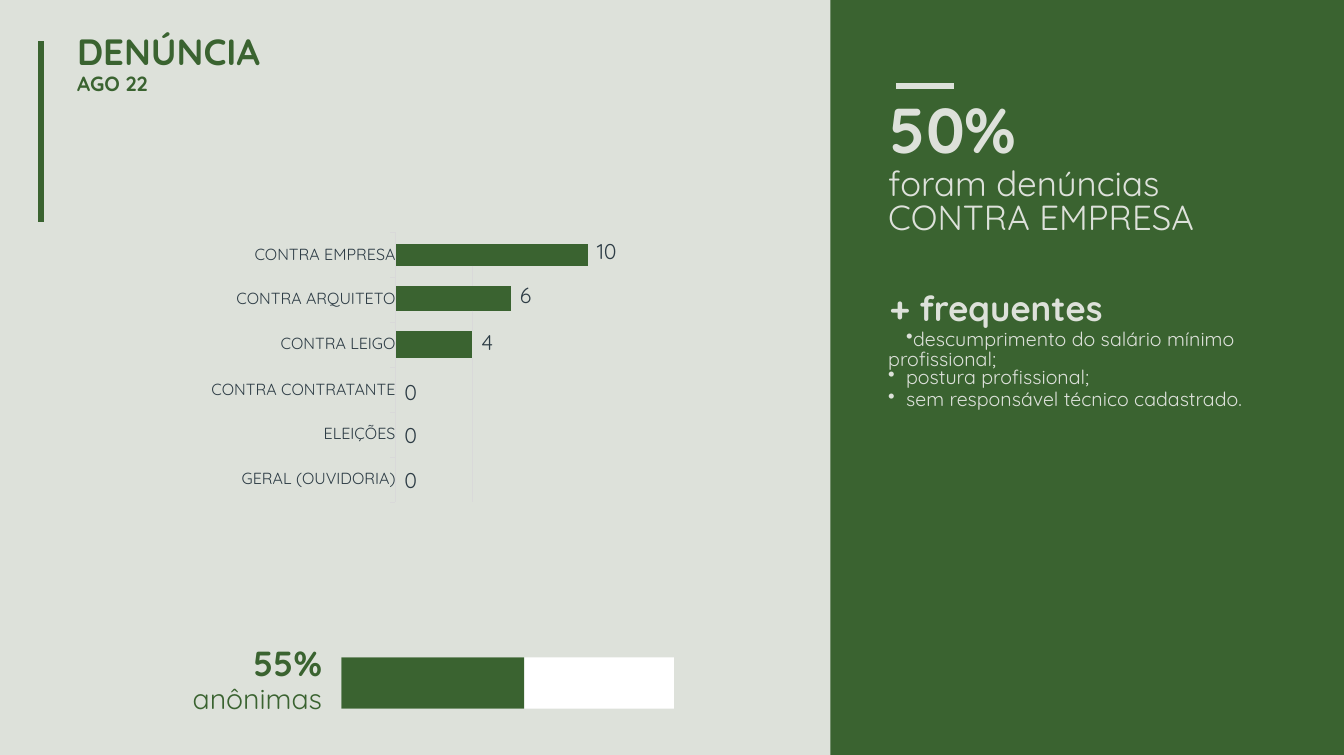
from lxml.etree import SubElement as Sub
from pptx import Presentation
from pptx.dml.color import RGBColor
from pptx.enum.shapes import MSO_CONNECTOR as Link, MSO_SHAPE as Shape
from pptx.enum.text import MSO_ANCHOR as Anchor, MSO_AUTO_SIZE as Auto, PP_ALIGN as Align
from pptx.oxml.ns import qn
from pptx.util import Inches, Pt

GREEN, PALE, WHITE, GRID, INK = "3A6330", "DDE1DA", "FFFFFF", "D9D9D9", "2E3D46"
FONT = "Quicksand"
NO_STYLE = "{2D5ABB26-0587-4C30-8999-92F81FD0307C}"
WIDE, HIGH = 10.47, 5.88
SIDE = 6.47
LEFT, TOP, STEP = 3.08, 1.81, 0.35
BAR = (2.66, 5.12, 2.59, 0.4)
SHARE = 0.55

COLS = [1.57, 0.6, 0.3, 0.6, 0.29]
ROWS = [0.17, 0.16, 0.19, 0.16, 0.21, 0.42, 0.35, 0.35]
# row: label runs, value, filled columns, label inset, value inset, value line
DATA = {
    0: (["CONTRA ", "EMPRESA"], "10", 3, 0, 0, 11.6),
    2: (["CONTRA ", "ARQUITETO"], "6", 2, 0.02, 0, 12.4),
    4: (["CONTRA LEIGO"], "4", 1, 0.02, 0, 13.7),
    5: (["CONTRA ", "CONTRATANTE"], "0", 0, 0.17, 0.16, None),
    6: (["ELEIÇÕES"], "0", 0, 0.09, 0.08, None),
    7: (["GERAL ", "(OUVIDORIA)"], "0", 0, 0.09, 0.08, None),
}
HEAD = [
    dict(runs=["DENÚNCIA"], size=20.5, bold=True, line=23.1, left=0.04),
    dict(runs=["AGO ", "22"], size=11.5, bold=True, line=12.3, left=0.04),
]
ANON = [
    dict(runs=["55%"], size=19.5, bold=True, line=21.9, align=Align.RIGHT),
    dict(runs=["anônimas"], size=16, line=17.7, align=Align.RIGHT),
]
ITEM = dict(size=11, bullet="•", left=0.15, indent=-0.14)
NOTES = [
    dict(runs=["50%"], size=35.5, bold=True, line=40.5, left=0.02),
    dict(runs=["foram ", "denúncias ", "CONTRA ", "EMPRESA"], size=19.5,
         line=19.1, before=2.1, left=0.01),
    dict(runs=["+ ", "frequentes"], size=19.5, bold=True, line=22.8,
         before=28, left=0.02),
    ITEM | dict(runs=["descumprimento do salário ", "mínimo profissional;"],
                line=11, before=1.6, left=0.01, indent=0.14),
    ITEM | dict(runs=["postura ", "profissional;"], line=10.2),
    ITEM | dict(runs=["sem responsável técnico ", "cadastrado."], line=12.2),
]


def color(code):
    return RGBColor.from_string(code)


def para(p, runs, size, tint, bold=False, line=None, before=0,
         left=0, indent=0, align=Align.LEFT, bullet=None):
    p.alignment, p.space_before = align, Pt(before)
    if line:
        p.line_spacing = Pt(line)
    props = p._p.get_or_add_pPr()
    props.set("marL", str(Inches(left)))
    props.set("indent", str(Inches(indent)))
    if bullet:
        Sub(props, qn("a:buChar")).set("char", bullet)
    for text in runs:
        run = p.add_run()
        run.text = text
        font = run.font
        font.name, font.size, font.bold = FONT, Pt(size), bold
        font.color.rgb = color(tint)


def write(box, paras, tint, top):
    frame = box.text_frame
    frame.word_wrap, frame.auto_size = True, Auto.NONE
    frame.vertical_anchor = Anchor.TOP
    frame.margin_left = frame.margin_right = frame.margin_bottom = 0
    frame.margin_top = Inches(top)
    for i, item in enumerate(paras):
        p = frame.add_paragraph() if i else frame.paragraphs[0]
        para(p, tint=tint, **item)


def rect(slide, x, y, w, h, tint):
    box = slide.shapes.add_shape(Shape.RECTANGLE, *map(Inches, (x, y, w, h)))
    box.shadow.inherit = False
    box.fill.solid()
    box.fill.fore_color.rgb = color(tint)
    box.line.fill.background()


def rule(slide, x, y, w, h, tint, width):
    line = slide.shapes.add_connector(
        Link.STRAIGHT, *map(Inches, (x, y, x + w, y + h)))
    line.line.color.rgb, line.line.width = color(tint), Pt(width)
    Sub(line._element.spPr, qn("a:effectLst"))


def edge(cell, side):
    props = cell._tc.get_or_add_tcPr()
    line = Sub(props, qn("a:" + side), w=str(Pt(0.75)))
    Sub(Sub(line, qn("a:solidFill")), qn("a:srgbClr")).set("val", GRID)


def bars(slide):
    spot = map(Inches, (LEFT - COLS[0], 1.9, sum(COLS), sum(ROWS)))
    table = slide.shapes.add_table(len(ROWS), len(COLS), *spot).table
    table.first_row = table.horz_banding = False
    table._tbl.tblPr.find(qn("a:tableStyleId")).text = NO_STYLE
    for col, size in zip(table.columns, COLS):
        col.width = Inches(size)
    for r, (row, size) in enumerate(zip(table.rows, ROWS)):
        row.height = Inches(size)
        names, value, count, *tops, pitch = DATA.get(r, ([], "", 0, 0, 0, None))
        for c, cell in enumerate(row.cells):
            cell.margin_left = cell.margin_right = cell.margin_bottom = 0
            cell.margin_top = 0
            if not count and c < 2:
                for side in (["lnR"], ["lnL", "lnR"])[c]:
                    edge(cell, side)
            cell.fill.background()
            if 0 < c <= count:
                cell.fill.solid()
                cell.fill.fore_color.rgb = color(GREEN)
            p = cell.text_frame.paragraphs[0]
            spot = 4 if r == 0 else count + 1
            if names and c == 0:
                cell.margin_top = Inches(tops[0])
                para(p, names, 9, INK, align=Align.RIGHT)
            elif value and c == spot:
                cell.margin_top = Inches(tops[1])
                para(p, [value], 12, INK, line=pitch, left=0.07)
            else:
                Sub(p._p, qn("a:endParaRPr")).set("sz", "600")


def main():
    """Build the slide of complaints and save it."""
    deck = Presentation()
    deck.slide_width, deck.slide_height = Inches(WIDE), Inches(HIGH)
    slide = deck.slides.add_slide(deck.slide_layouts[5])
    back = slide.background.fill
    back.solid()
    back.fore_color.rgb = color(PALE)

    title = slide.shapes.title
    title.left, title.top, title.width, title.height = map(
        Inches, (0.56, 0.23, 5.82, 0.85))
    write(title, HEAD, GREEN, 0.02)

    x, y, w, h = BAR
    rect(slide, x, y, w, h, WHITE)
    rect(slide, x, y, w * SHARE, h, GREEN)
    rect(slide, SIDE, 0, WIDE - SIDE, HIGH, GREEN)
    rule(slide, 6.98, 0.67, 0.45, 0, PALE, 3.6)
    rule(slide, 0.32, 0.32, 0, 1.41, GREEN, 3.6)

    bars(slide)
    rule(slide, LEFT, TOP, 0, 6 * STEP, GRID, 0.6)
    for i in range(7):
        rule(slide, LEFT - 0.04, TOP + i * STEP, 0.04, 0, GRID, 0.6)

    for spot, paras, tint, top in (
            ((1.4, 5.01, 1.11, 0.58), ANON, GREEN, 0.01),
            ((6.91, 0.71, 3.06, 2.5), NOTES, PALE, 0.02)):
        write(slide.shapes.add_textbox(*map(Inches, spot)), paras, tint, top)
    deck.save("out.pptx")


if __name__ == "__main__":
    main()
